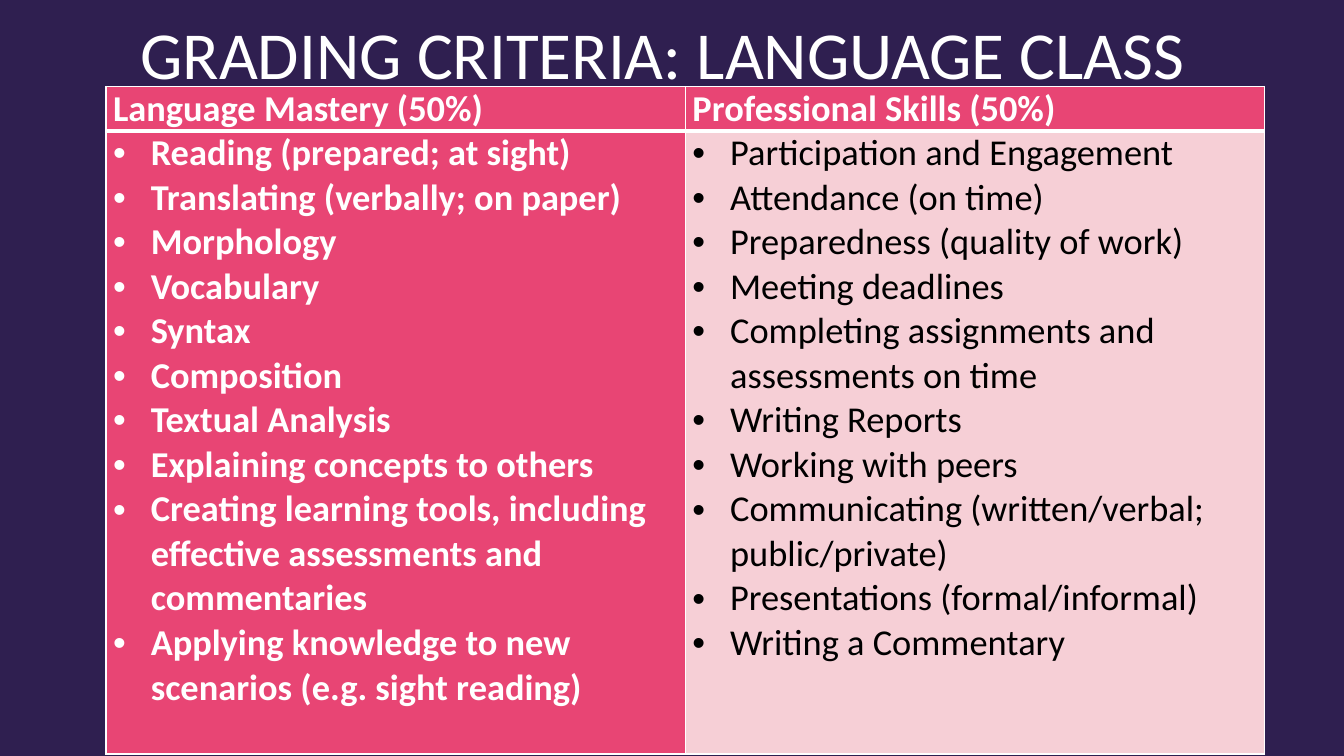
"""Build the language class grading criteria slide."""
from dataclasses import dataclass

from lxml import etree
from pptx import Presentation
from pptx.dml.color import RGBColor
from pptx.enum.text import MSO_ANCHOR, PP_ALIGN
from pptx.oxml.ns import qn
from pptx.util import Cm, Pt

BOTTOM = MSO_ANCHOR.BOTTOM
RIGHT = PP_ALIGN.RIGHT
FONT = "Calibri"
COLORS = {
    "background": "2F1F50",
    "white": "FFFFFF",
    "black": "000000",
    "pink": "E84574",
    "pale": "F6CFD6",
}
INDENT = Cm(0.95)
CELL_MARGIN = Cm(0.18)
THIN, THICK = Pt(1), Pt(3)


@dataclass
class Criteria:
    heading: str
    items: list[str]
    fill: str
    color: str
    bold: bool


CRITERIA = [
    Criteria("Language Mastery (50%)", [
        "Reading (prepared; at sight)",
        "Translating (verbally; on paper)",
        "Morphology",
        "Vocabulary",
        "Syntax",
        "Composition",
        "Textual Analysis",
        "Explaining concepts to others",
        "Creating learning tools, including effective assessments and commentaries",
        "Applying knowledge to new scenarios (e.g. sight reading)",
    ], "pink", "white", True),
    Criteria("Professional Skills (50%)", [
        "Participation and Engagement",
        "Attendance (on time)",
        "Preparedness (quality of work)",
        "Meeting deadlines",
        "Completing assignments and assessments on time",
        "Writing Reports",
        "Working with peers",
        "Communicating (written/verbal; public/private)",
        "Presentations (formal/informal)",
        "Writing a Commentary",
    ], "pale", "black", False),
]


def rgb(name: str) -> RGBColor:
    return RGBColor.from_string(COLORS[name])


def style_font(para, size: int, color: str, bold: bool) -> None:
    font = para.font
    font.name = FONT
    font.size = Pt(size)
    font.bold = bold
    font.color.rgb = rgb(color)


def add_bullet(para) -> None:
    properties = para._p.get_or_add_pPr()
    properties.set("marL", str(INDENT))
    properties.set("indent", str(-INDENT))
    etree.SubElement(properties, qn("a:buFont"), typeface="Arial")
    etree.SubElement(properties, qn("a:buChar"), char="•")


def add_borders(cell, top: int, bottom: int) -> None:
    properties = cell._tc.get_or_add_tcPr()
    widths = {"a:lnL": THIN, "a:lnR": THIN, "a:lnT": top, "a:lnB": bottom}
    for position, (tag, width) in enumerate(widths.items()):
        line = etree.Element(qn(tag), w=str(width))
        solid = etree.SubElement(line, qn("a:solidFill"))
        etree.SubElement(solid, qn("a:srgbClr"), val=COLORS["white"])
        properties.insert(position, line)


def fill_cell(cell, lines: list[str], fill: str, color: str, bold: bool, bulleted: bool) -> None:
    cell.margin_left = cell.margin_right = CELL_MARGIN
    cell.margin_top = cell.margin_bottom = 0
    cell.fill.solid()
    cell.fill.fore_color.rgb = rgb(fill)
    cell.text_frame.text = "\n".join(lines)
    for para in cell.text_frame.paragraphs:
        if bulleted:
            add_bullet(para)
        style_font(para, 26, color, bold)


def add_title(page) -> None:
    box = page.shapes.add_textbox(Cm(2.9), Cm(-0.91), Cm(27.23), Cm(3.3))
    frame = box.text_frame
    frame.word_wrap = True
    frame.vertical_anchor = BOTTOM
    frame.margin_bottom = Cm(0.05)
    para = frame.paragraphs[0]
    para.text = "GRADING CRITERIA: LANGUAGE CLASS"
    para.alignment = RIGHT
    style_font(para, 48, "white", False)


def add_criteria_table(page) -> None:
    heights = [Cm(1.12), Cm(15.7)]
    table = page.shapes.add_table(
        len(heights), len(CRITERIA), Cm(2.67), Cm(2.18), Cm(29.2), sum(heights)
    ).table
    table.first_row = table.horz_banding = False
    for row, height in zip(table.rows, heights):
        row.height = height
    for column, criteria in enumerate(CRITERIA):
        header, body = table.cell(0, column), table.cell(1, column)
        fill_cell(header, [criteria.heading], "pink", "white", True, False)
        fill_cell(body, criteria.items, criteria.fill, criteria.color, criteria.bold, True)
        add_borders(header, THIN, THICK)
        add_borders(body, THICK, THIN)


def main() -> None:
    deck = Presentation()
    deck.slide_width, deck.slide_height = Cm(33.87), Cm(19.05)
    page = deck.slides.add_slide(deck.slide_layouts[6])
    page.background.fill.solid()
    page.background.fill.fore_color.rgb = rgb("background")
    add_title(page)
    add_criteria_table(page)
    deck.save("out.pptx")


if __name__ == "__main__":
    main()
